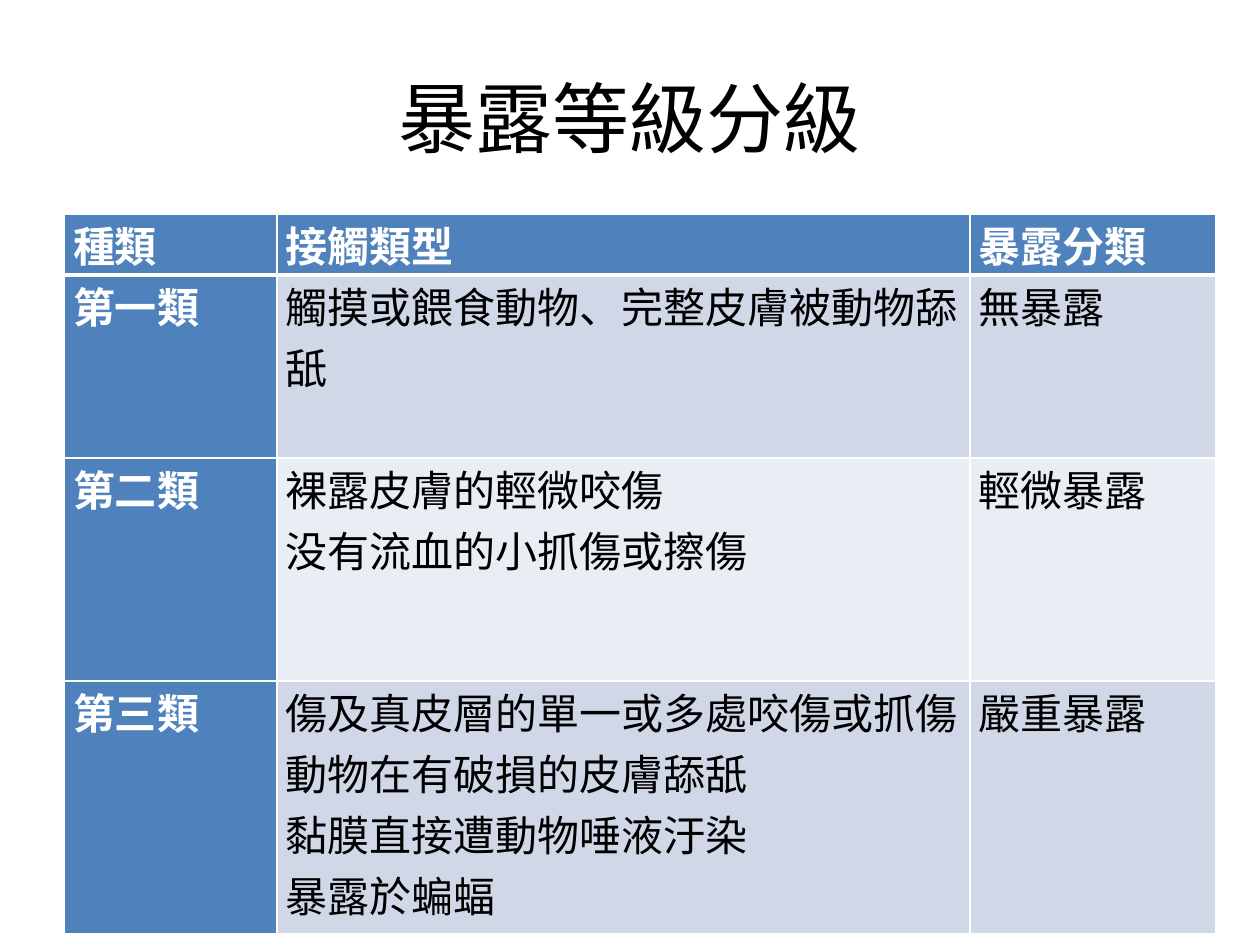
from dataclasses import dataclass

from lxml import etree
from pptx import Presentation
from pptx import util as u
from pptx.dml.color import RGBColor
from pptx.enum import text
from pptx.oxml.ns import qn


@dataclass(frozen=True)
class Theme:
    accent: str = "4F81BD"
    bands: tuple = ("D0D8E8", "E9EDF4")
    light: str = "FFFFFF"
    dark: str = "000000"
    title_font: str = "Arial"
    body_font: str = "Noto Sans CJK SC"
    title_size: int = 44
    body_size: int = 24
    rule: int = 1
    header_rule: int = 3


class SlideBuilder:
    def __init__(self, deck, theme):
        self.deck = deck
        self.theme = theme
        self.slide = deck.slides.add_slide(deck.slide_layouts[5])

    def across(self, share):
        return round(self.deck.slide_width * share)

    def down(self, share):
        return round(self.deck.slide_height * share)

    def add_span(self, para, words, font, size, color, bold=False):
        span = para.add_run()
        span.text = words
        span.font.name = font
        span.font.size = u.Pt(size)
        span.font.bold = bold
        span.font.color.rgb = RGBColor.from_string(color)
        east_asian = etree.SubElement(span.font._element, qn("a:ea"))
        east_asian.set("typeface", self.theme.body_font)

    def title(self, words, left, top, width, height):
        box = self.slide.shapes.title
        box.left, box.top = self.across(left), self.down(top)
        box.width, box.height = self.across(width), self.down(height)
        box.text_frame.vertical_anchor = text.MSO_ANCHOR.MIDDLE
        para = box.text_frame.paragraphs[0]
        para.alignment = text.PP_ALIGN.CENTER
        self.add_span(para, words, self.theme.title_font,
                      self.theme.title_size, self.theme.dark)

    def table(self, rows, left, top, widths, heights):
        """Rows hold cells, and each cell is a list of paragraphs."""
        frame = self.slide.shapes.add_table(
            len(rows), len(widths), self.across(left), self.down(top),
            self.across(sum(widths)), self.down(sum(heights)))
        grid = frame.table
        for column, width in zip(grid.columns, widths):
            column.width = self.across(width)
        for row, height in zip(grid.rows, heights):
            row.height = self.down(height)
        for r, row in enumerate(rows):
            for c, lines in enumerate(row):
                self.cell(grid.cell(r, c), lines, r, c)

    def cell(self, cell, lines, row, column):
        theme = self.theme
        heading = row == 0 or column == 0
        self.borders(cell, row)
        cell.fill.solid()
        fill = theme.accent if heading else theme.bands[(row - 1) % 2]
        cell.fill.fore_color.rgb = RGBColor.from_string(fill)
        cell.margin_left = cell.margin_right = u.Inches(0.07)
        cell.margin_top = cell.margin_bottom = 0
        frame = cell.text_frame
        for i, line in enumerate(lines):
            para = frame.add_paragraph() if i else frame.paragraphs[0]
            self.add_span(para, line, theme.body_font, theme.body_size,
                          theme.light if heading else theme.dark, heading)

    def borders(self, cell, row):
        theme = self.theme
        heavy_side = {0: "lnB", 1: "lnT"}.get(row)
        properties = cell._tc.get_or_add_tcPr()
        for side in ("lnL", "lnR", "lnT", "lnB"):
            points = theme.header_rule if side == heavy_side else theme.rule
            line = etree.SubElement(properties, qn(f"a:{side}"), w=str(int(u.Pt(points))))
            fill = etree.SubElement(line, qn("a:solidFill"))
            etree.SubElement(fill, qn("a:srgbClr"), val=theme.light)


EXPOSURE_LEVELS = [
    [["種類"], ["接觸類型"], ["暴露分類"]],
    [["第一類"], ["觸摸或餵食動物、完整皮膚被動物舔舐"], ["無暴露"]],
    [["第二類"], ["裸露皮膚的輕微咬傷", "没有流血的小抓傷或擦傷"], ["輕微暴露"]],
    [["第三類"],
     ["傷及真皮層的單一或多處咬傷或抓傷", "動物在有破損的皮膚舔舐",
      "黏膜直接遭動物唾液汙染", "暴露於蝙蝠"],
     ["嚴重暴露"]],
]


def main():
    deck = Presentation()
    deck.slide_width, deck.slide_height = u.Inches(10), u.Inches(7.5)
    builder = SlideBuilder(deck, Theme())
    builder.title("暴露等級分級", 0.05, 0.04, 0.9, 1 / 6)
    builder.table(EXPOSURE_LEVELS, 0.051, 1.7 / 7.5,
                  widths=(0.169, 0.55, 0.195),
                  heights=[inches / 7.5 for inches in (0.48, 1.45, 1.77, 2.01)])
    deck.save("out.pptx")


if __name__ == "__main__":
    main()
